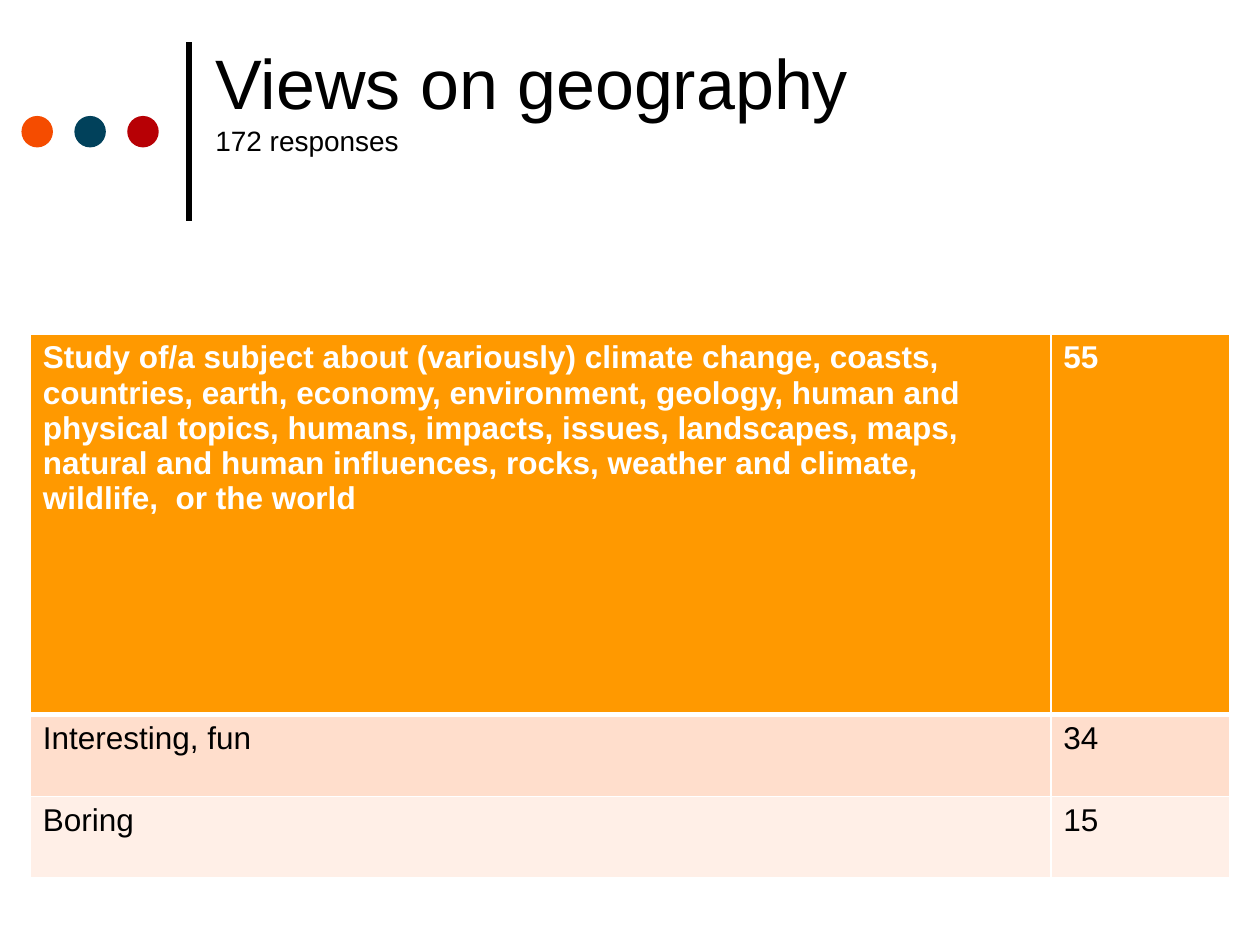
from typing import NamedTuple

from lxml.etree import SubElement
from pptx import Presentation
from pptx.dml.color import RGBColor
from pptx.enum.shapes import MSO_CONNECTOR, MSO_SHAPE
from pptx.enum.text import MSO_ANCHOR, PP_ALIGN
from pptx.oxml.ns import qn
from pptx.util import Inches, Pt

BLACK = RGBColor(0x00, 0x00, 0x00)
WHITE = RGBColor(0xFF, 0xFF, 0xFF)
ORANGE = RGBColor(0xFF, 0x99, 0x00)
PEACH = RGBColor(0xFF, 0xDE, 0xCC)
PALE_PEACH = RGBColor(0xFF, 0xEF, 0xE7)
DOT_COLORS = (
    RGBColor(0xF5, 0x4C, 0x00),
    RGBColor(0x01, 0x41, 0x5B),
    RGBColor(0xB7, 0x00, 0x05),
)
COLUMN_WIDTHS = (8.1, 1.42)


class ResponseRow(NamedTuple):
    view: str
    count: str
    height: float
    fill: RGBColor
    color: RGBColor = BLACK
    bold: bool = False
    top_border: float = 1
    bottom_border: float = 1


ROWS = (
    ResponseRow(
        "Study of/a subject about (variously) climate change, coasts, countries, "
        "earth, economy, environment, geology, human and physical topics, humans, "
        "impacts, issues, landscapes, maps, natural and human influences, rocks, "
        "weather and climate, wildlife,  or the world",
        "55", 3.02, ORANGE, WHITE, bold=True, bottom_border=3,
    ),
    ResponseRow("Interesting, fun", "34", 0.65, PEACH, top_border=3),
    ResponseRow("Boring", "15", 0.65, PALE_PEACH),
)


def add_span(para, text: str, *, size: float, color: RGBColor = BLACK,
             bold: bool = False) -> None:
    span = para.add_run()
    span.text = text
    span.font.name = "Arial"
    span.font.size = Pt(size)
    span.font.bold = bold
    span.font.color.rgb = color


def add_divider(page) -> None:
    divider = page.shapes.add_connector(
        MSO_CONNECTOR.STRAIGHT, Inches(1.5), Inches(1.75), Inches(1.5), Inches(0.33))
    divider.line.color.rgb = BLACK
    divider.line.width = Pt(3)
    SubElement(divider._element.spPr, qn("a:effectLst"))


def add_dot(page, left: float, color: RGBColor) -> None:
    dot = page.shapes.add_shape(
        MSO_SHAPE.OVAL, Inches(left), Inches(0.92), Inches(0.25), Inches(0.25))
    dot.shadow.inherit = False
    dot.fill.solid()
    dot.fill.fore_color.rgb = color
    dot.line.fill.background()


def fill_title(page) -> None:
    title = page.shapes.title
    title.left, title.top = Inches(1.61), Inches(0.21)
    title.width, title.height = Inches(5.98), Inches(1.57)
    frame = title.text_frame
    frame.word_wrap = True
    frame.vertical_anchor = MSO_ANCHOR.TOP
    frame.margin_top = Inches(0.1)
    para = frame.paragraphs[0]
    para.alignment = PP_ALIGN.LEFT
    add_span(para, "Views on geography", size=40)
    para.add_line_break()
    add_span(para, "172 responses", size=16)


def add_border(cell, side: str, width: float) -> None:
    line = SubElement(cell._tc.get_or_add_tcPr(), qn(f"a:{side}"), w=str(Pt(width)))
    fill = SubElement(line, qn("a:solidFill"))
    SubElement(fill, qn("a:srgbClr"), val=str(WHITE))


def fill_cell(cell, text: str, row: ResponseRow) -> None:
    add_border(cell, "lnL", 1)
    add_border(cell, "lnR", 1)
    add_border(cell, "lnT", row.top_border)
    add_border(cell, "lnB", row.bottom_border)
    cell.fill.solid()
    cell.fill.fore_color.rgb = row.fill
    add_span(cell.text_frame.paragraphs[0], text, size=18, color=row.color, bold=row.bold)


def add_response_table(page) -> None:
    table = page.shapes.add_table(
        len(ROWS), len(COLUMN_WIDTHS), Inches(0.24), Inches(2.65),
        Inches(sum(COLUMN_WIDTHS)), Inches(sum(row.height for row in ROWS))).table
    for column, width in zip(table.columns, COLUMN_WIDTHS):
        column.width = Inches(width)
    for index, row in enumerate(ROWS):
        table.rows[index].height = Inches(row.height)
        for column, text in enumerate((row.view, row.count)):
            fill_cell(table.cell(index, column), text, row)


def main() -> None:
    deck = Presentation()
    deck.slide_width, deck.slide_height = Inches(10), Inches(7.5)
    page = deck.slides.add_slide(deck.slide_layouts[5])
    add_divider(page)
    for index, color in enumerate(DOT_COLORS):
        add_dot(page, 0.17 + 0.42 * index, color)
    fill_title(page)
    add_response_table(page)
    deck.save("out.pptx")


if __name__ == "__main__":
    main()
